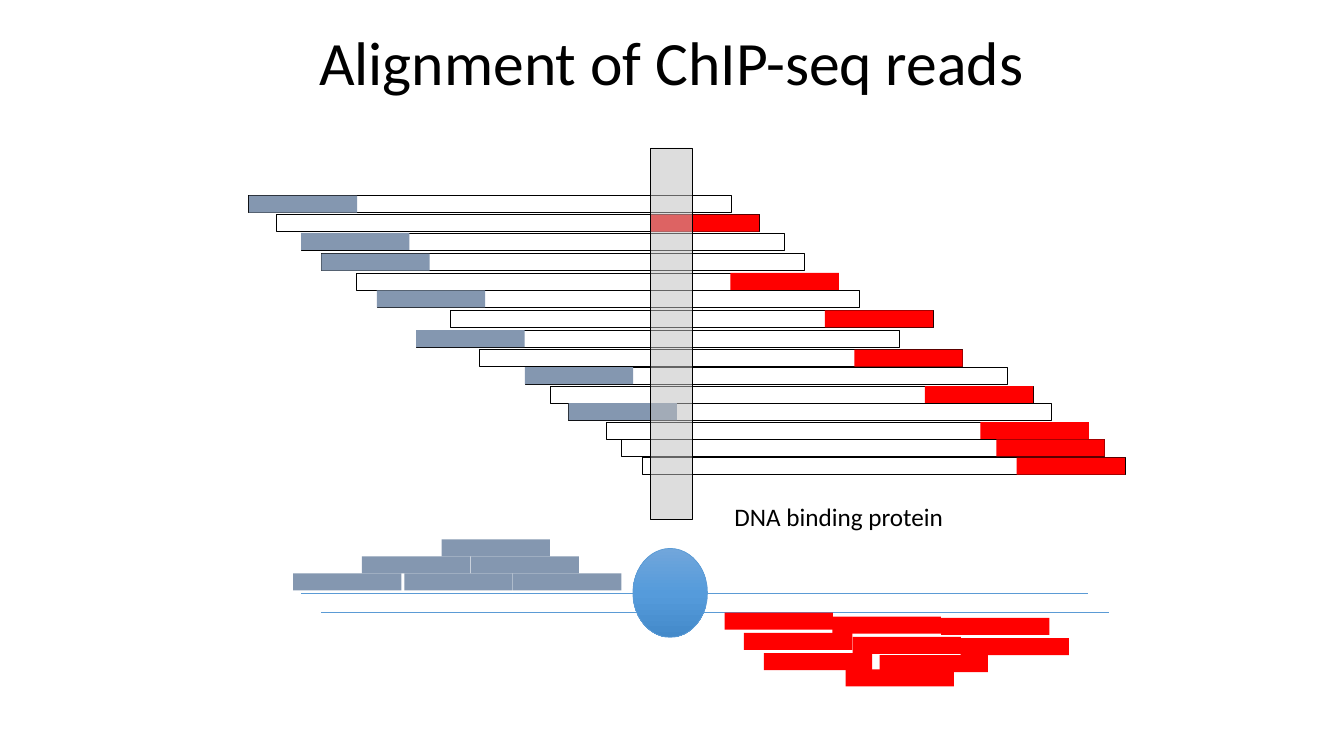
from pptx import Presentation
from pptx.dml.color import RGBColor
from pptx.enum.shapes import MSO_CONNECTOR, MSO_SHAPE
from pptx.enum.text import MSO_ANCHOR, PP_ALIGN
from pptx.oxml import parse_xml
from pptx.oxml.ns import nsdecls, qn
from pptx.util import Cm, Pt
from lxml.etree import SubElement

BLUE, RED = "8497B0", "FF0000"
WHITE, BLACK, SKY, GREY = "FFFFFF", "000000", "5B9BD5", "BFBFBF"
READ, FRAG, HIGH = 2.73, 12.17, 0.43

FRAGS = [
    (6.27, 4.93, BLUE), (6.96, 5.41, RED), (7.59, 5.87, BLUE),
    (8.10, 6.39, BLUE), (8.97, 6.88, RED), (9.50, 7.32, BLUE),
    (11.35, 7.82, RED), (10.49, 8.32, BLUE), (12.09, 8.81, RED),
    (13.23, 9.25, BLUE), (13.87, 9.73, RED), (14.33, 10.16, BLUE),
    (15.27, 10.64, RED), (15.67, 11.07, RED), (16.18, 11.53, RED),
]
PILES = {
    RED: [
        (18.26, 15.44), (18.75, 15.95), (19.25, 16.46),
        (22.17, 16.51), (21.31, 16.87), (20.98, 15.54),
        (21.49, 16.05), (23.72, 15.57), (24.21, 16.08),
    ],
    BLUE: [
        (11.86, 14.02), (7.39, 14.45), (12.93, 14.45),
        (10.19, 14.45), (9.12, 14.02), (11.13, 13.59),
    ],
}


def color(code):
    return RGBColor.from_string(code)


def add_form(slide, kind, left, top, width, height, fill, line=None):
    form = slide.shapes.add_shape(kind, Cm(left), Cm(top), Cm(width), Cm(height))
    form.shadow.inherit = False
    form.fill.solid()
    form.fill.fore_color.rgb = color(fill)
    if line:
        form.line.color.rgb = color(line)
        form.line.width = Pt(0.5)
    else:
        form.line.fill.background()
    return form


def add_bar(slide, left, top, width, fill, line=None):
    return add_form(slide, MSO_SHAPE.RECTANGLE, left, top, width, HIGH, fill, line)


def add_frag(slide, left, top, fill):
    add_bar(slide, left, top, FRAG, WHITE, BLACK)
    start = left if fill == BLUE else left + FRAG - READ
    add_bar(slide, start, top, READ, fill)


def add_site(slide):
    site = add_form(slide, MSO_SHAPE.RECTANGLE, 16.4, 3.73, 1.04, 9.37, GREY, BLACK)
    tint = site.fill._xPr.find(qn("a:solidFill"))[0]
    SubElement(tint, qn("a:alpha")).set("val", "52000")


def add_strand(slide, left, right, top):
    strand = slide.shapes.add_connector(
        MSO_CONNECTOR.STRAIGHT, Cm(left), Cm(top), Cm(right), Cm(top))
    strand.line.color.rgb = color(SKY)
    strand.line.width = Pt(1)
    SubElement(strand._element.spPr, qn("a:effectLst"))


def add_protein(slide):
    ball = add_form(slide, MSO_SHAPE.OVAL, 15.95, 13.82, 1.88, 2.24, SKY, SKY)
    stops = "".join(
        f'<a:gs pos="{pos * 1000}"><a:srgbClr val="{code}"/></a:gs>'
        for pos, code in [(0, "71A6DB"), (50, "559BDB"), (100, "448ACA")])
    fade = parse_xml(
        f'<a:gradFill {nsdecls("a")} rotWithShape="1"><a:gsLst>{stops}</a:gsLst>'
        '<a:lin ang="5400000" scaled="0"/></a:gradFill>')
    props = ball._element.spPr
    props.replace(props.find(qn("a:solidFill")), fade)


def add_text(slide, left, top, width, height, words, size, align, anchor, wrap):
    frame = slide.shapes.add_textbox(
        Cm(left), Cm(top), Cm(width), Cm(height)).text_frame
    frame.word_wrap = wrap
    frame.vertical_anchor = anchor
    para = frame.paragraphs[0]
    para.alignment = align
    if size > 40:
        para.line_spacing = 0.9
    run = para.add_run()
    run.text = words
    run.font.name = "Calibri"
    run.font.size = Pt(size)
    run.font.color.rgb = color(BLACK)


def main():
    deck = Presentation()
    deck.slide_width, deck.slide_height = Cm(33.87), Cm(19.05)
    slide = deck.slides.add_slide(deck.slide_layouts[6])
    add_text(slide, 5.5, 0.05, 22.86, 3.18, "Alignment of ChIP-seq reads",
             44, PP_ALIGN.CENTER, MSO_ANCHOR.MIDDLE, True)
    for left, top, fill in FRAGS:
        add_frag(slide, left, top, fill)
    add_site(slide)
    add_strand(slide, 7.59, 27.43, 14.96)
    add_strand(slide, 8.1, 27.94, 15.44)
    add_protein(slide)
    add_text(slide, 18.26, 12.5, 6.88, 1.22, "DNA binding protein",
             18, PP_ALIGN.LEFT, MSO_ANCHOR.TOP, False)
    for fill, spots in PILES.items():
        for left, top in spots:
            add_bar(slide, left, top, READ, fill)
    deck.save("out.pptx")


if __name__ == "__main__":
    main()
